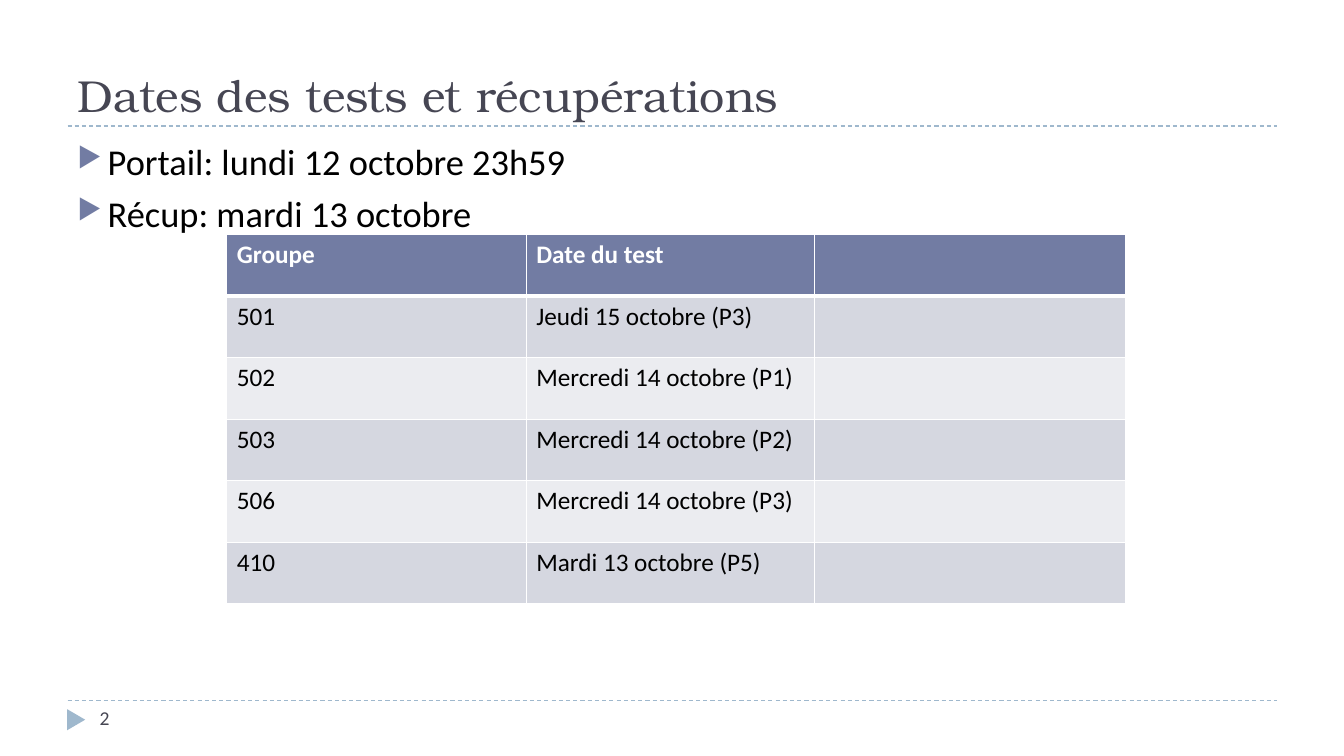
"""Build the slide listing test and catch-up dates."""
from dataclasses import dataclass

from lxml import etree
from pptx import Presentation
from pptx.dml.color import RGBColor
from pptx.enum.dml import MSO_LINE
from pptx.enum.shapes import MSO_CONNECTOR, MSO_SHAPE
from pptx.enum.text import MSO_ANCHOR
from pptx.oxml.ns import qn
from pptx.slide import Slide
from pptx.util import Inches, Pt

DASH = MSO_LINE.DASH
STRAIGHT = MSO_CONNECTOR.STRAIGHT
TRIANGLE = MSO_SHAPE.ISOSCELES_TRIANGLE
TOP, BOTTOM = MSO_ANCHOR.TOP, MSO_ANCHOR.BOTTOM

BODY_FONT, TITLE_FONT = "Calibri", "TeX Gyre Bonum"
WHITE, BLACK, SLATE = "FFFFFF", "000000", "464653"
ACCENT, PALE_BLUE = "727CA3", "9FB8CD"
BAND_FILLS = ("D5D7E0", "EBECF0")

RULE_HEIGHTS = (1.25, 6.95)
COLUMN_WIDTHS = (2.97, 2.86, 3.08)
ROW_HEIGHT = 0.61
SCHEDULE = (
    ("Groupe", "Date du test", ""),
    ("501", "Jeudi 15 octobre (P3)", ""),
    ("502", "Mercredi 14 octobre (P1)", ""),
    ("503", "Mercredi 14 octobre (P2)", ""),
    ("506", "Mercredi 14 octobre (P3)", ""),
    ("410", "Mardi 13 octobre (P5)", ""),
)


@dataclass(frozen=True)
class TextBlock:
    lines: tuple[str, ...]
    left: float
    top: float
    width: float
    height: float
    size: float
    color: str
    font: str = BODY_FONT
    anchor: MSO_ANCHOR = TOP
    bulleted: bool = False


TEXT_BLOCKS = (
    TextBlock(("Dates des tests et récupérations",), 0.67, 0.17, 12, 1.08,
              32, SLATE, TITLE_FONT, BOTTOM),
    TextBlock(("2",), 0.89, 6.95, 2.89, 0.4, 14, SLATE),
    TextBlock(("Portail: lundi 12 octobre 23h59", "Récup: mardi 13 octobre"),
              0.67, 1.33, 12, 5.4, 26, BLACK, bulleted=True),
)


def rgb(color: str) -> RGBColor:
    return RGBColor.from_string(color)


def set_font(paragraph, name: str, size: float, color: str, bold: bool = False) -> None:
    font = paragraph.font
    font.name, font.size, font.bold = name, Pt(size), bold
    font.color.rgb = rgb(color)


def add_bullet(paragraph) -> None:
    paragraph.space_before = Pt(6)
    properties = paragraph._p.get_or_add_pPr()
    properties.set("marL", str(Inches(0.3)))
    properties.set("indent", str(Inches(-0.3)))
    bullet_color = etree.Element(qn("a:buClr"))
    etree.SubElement(bullet_color, qn("a:srgbClr"), val=ACCENT)
    bullet_parts = (
        bullet_color,
        etree.Element(qn("a:buSzPct"), val="76000"),
        etree.Element(qn("a:buChar"), char="▶"),
    )
    default_font = properties.find(qn("a:defRPr"))
    for part in bullet_parts:
        default_font.addprevious(part)


def add_text(slide: Slide, block: TextBlock) -> None:
    shape = slide.shapes.add_textbox(Inches(block.left), Inches(block.top),
                                     Inches(block.width), Inches(block.height))
    frame = shape.text_frame
    frame.word_wrap = True
    frame.vertical_anchor = block.anchor
    frame.text = "\n".join(block.lines)
    for paragraph in frame.paragraphs:
        set_font(paragraph, block.font, block.size, block.color)
        if block.bulleted:
            add_bullet(paragraph)


def add_rule(slide: Slide, height: float) -> None:
    rule = slide.shapes.add_connector(STRAIGHT, Inches(0.67), Inches(height),
                                      Inches(12.67), Inches(height))
    rule.line.color.rgb = rgb(PALE_BLUE)
    rule.line.width = Pt(0.75)
    rule.line.dash_style = DASH
    etree.SubElement(rule._element.spPr, qn("a:effectLst"))


def add_page_marker(slide: Slide) -> None:
    marker = slide.shapes.add_shape(TRIANGLE, Inches(0.65), Inches(7.05),
                                    Inches(0.21), Inches(0.18))
    marker.rotation = 90
    marker.shadow.inherit = False
    marker.fill.solid()
    marker.fill.fore_color.rgb = rgb(PALE_BLUE)
    marker.line.fill.background()


def set_borders(cell, top: float, bottom: float) -> None:
    properties = cell._tc.get_or_add_tcPr()
    widths = {"a:lnL": 1, "a:lnR": 1, "a:lnT": top, "a:lnB": bottom}
    for position, (tag, width) in enumerate(widths.items()):
        border = etree.Element(qn(tag), w=str(Pt(width)))
        fill = etree.SubElement(border, qn("a:solidFill"))
        etree.SubElement(fill, qn("a:srgbClr"), val=WHITE)
        properties.insert(position, border)


def add_schedule(slide: Slide) -> None:
    table = slide.shapes.add_table(
        len(SCHEDULE), len(COLUMN_WIDTHS), Inches(2.25), Inches(2.33),
        Inches(sum(COLUMN_WIDTHS)), Inches(ROW_HEIGHT * len(SCHEDULE))).table
    for column, width in zip(table.columns, COLUMN_WIDTHS):
        column.width = Inches(width)
    for row_index, values in enumerate(SCHEDULE):
        table.rows[row_index].height = Inches(ROW_HEIGHT)
        is_header = row_index == 0
        fill = ACCENT if is_header else BAND_FILLS[(row_index - 1) % 2]
        for column_index, value in enumerate(values):
            cell = table.cell(row_index, column_index)
            cell.text = value
            cell.fill.solid()
            cell.fill.fore_color.rgb = rgb(fill)
            set_font(cell.text_frame.paragraphs[0], BODY_FONT, 18,
                     WHITE if is_header else BLACK, is_header)
            set_borders(cell, top=3 if row_index == 1 else 1,
                        bottom=3 if is_header else 1)


def main() -> None:
    presentation = Presentation()
    presentation.slide_width = Inches(13.33)
    presentation.slide_height = Inches(7.5)
    slide = presentation.slides.add_slide(presentation.slide_layouts[6])
    for height in RULE_HEIGHTS:
        add_rule(slide, height)
    add_page_marker(slide)
    for block in TEXT_BLOCKS:
        add_text(slide, block)
    add_schedule(slide)
    presentation.save("out.pptx")


if __name__ == "__main__":
    main()
